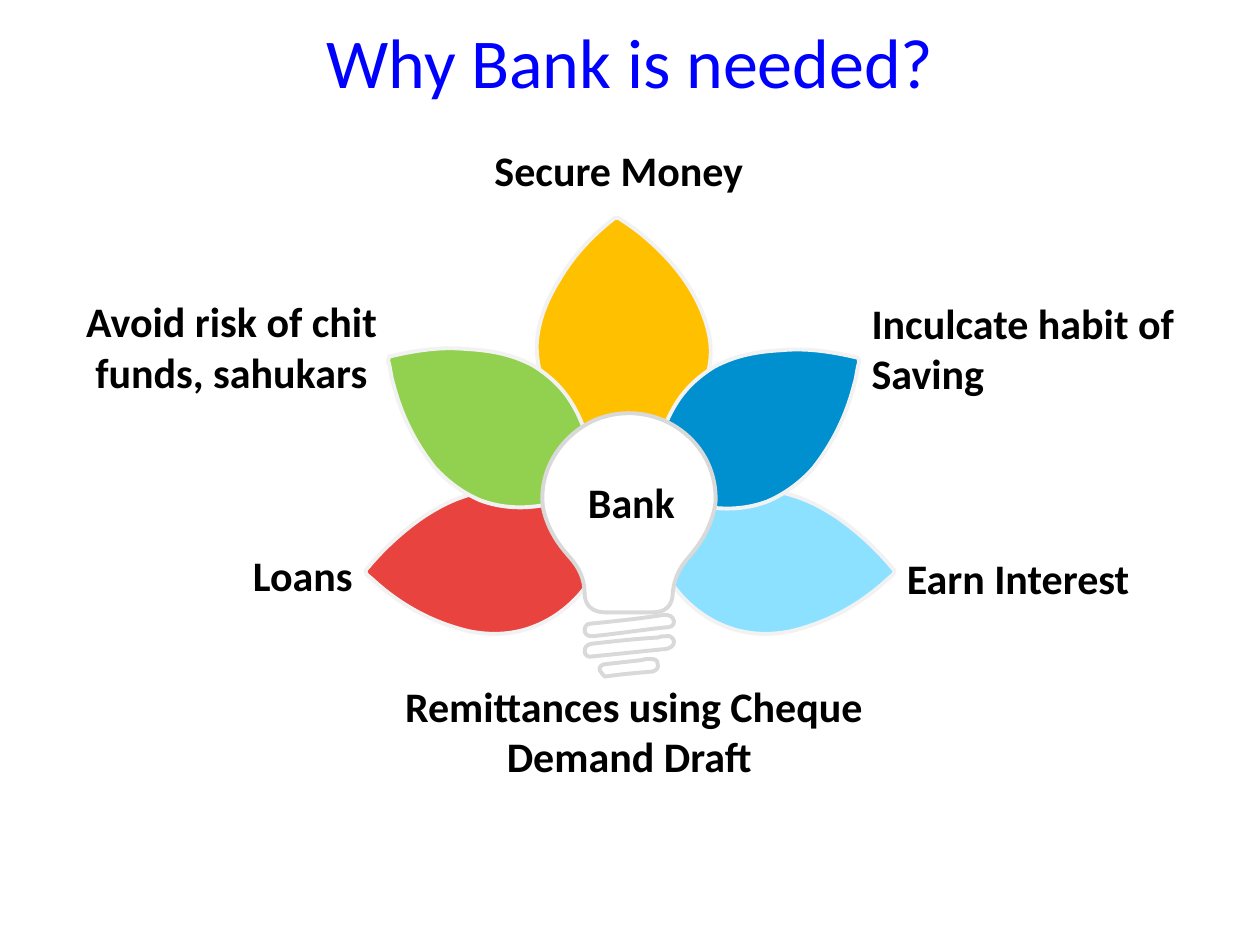
from lxml.etree import SubElement
from pptx import Presentation
from pptx.dml.color import RGBColor
from pptx.enum.text import MSO_ANCHOR, MSO_AUTO_SIZE, PP_ALIGN
from pptx.oxml.ns import qn
from pptx.util import Cm, Pt

COLOURS = {
    "title": "0000FF", "text": "000000", "petal edge": "F2F2F2",
    "bulb": "FFFFFF", "bulb edge": "D9D9D9", "gold": "FFC000",
    "sky": "8BE1FF", "blue": "0090D0", "red": "E9433F", "green": "92D050",
}

# Outlines are drawn on a grid of 100 units to 2.54 cm.
# Each holds a start point, then three points for every Bezier curve.
GRID = Cm(2.54) / 100

LOWER_PETAL = [
    (628, 501), (653, 495), (675, 484), (695, 468), (700, 464), (704, 460), (709, 456),
    (709, 455), (709, 454), (710, 453), (697, 437), (682, 423), (665, 411),
    (650, 401), (634, 393), (615, 390), (600, 388), (585, 390), (571, 395),
    (552, 403), (538, 415), (525, 430), (524, 433), (522, 435), (521, 437),
    (520, 441), (520, 441), (520, 441), (521, 442), (521, 443), (521, 444),
    (527, 454), (533, 464), (541, 473), (553, 486), (567, 495), (584, 500),
    (599, 504), (613, 504), (628, 501)]
TOP_PETAL = [
    (557, 247), (547, 223), (530, 203), (508, 185), (503, 181), (497, 177), (491, 173),
    (490, 173), (489, 173), (488, 173), (470, 187), (455, 203), (444, 222),
    (434, 238), (427, 255), (426, 274), (426, 290), (430, 304), (439, 318),
    (451, 335), (468, 348), (489, 358), (491, 360), (494, 361), (497, 362),
    (502, 362), (502, 362), (502, 362), (503, 361), (504, 361), (505, 361),
    (517, 354), (528, 346), (537, 337), (551, 324), (560, 309), (563, 291),
    (566, 276), (563, 262), (557, 247)]
UPPER_PETAL = [
    (645, 372), (661, 352), (672, 329), (678, 305), (680, 299), (680, 293), (682, 287),
    (681, 286), (681, 285), (681, 284), (660, 279), (640, 276), (620, 278),
    (601, 279), (584, 282), (567, 291), (554, 299), (543, 309), (535, 323),
    (525, 340), (521, 358), (520, 378), (520, 381), (520, 383), (521, 386),
    (523, 390), (523, 390), (523, 390), (524, 390), (524, 391), (525, 391),
    (536, 396), (547, 400), (559, 402), (576, 405), (593, 404), (609, 398),
    (623, 392), (635, 383), (645, 372)]
BULB_PARTS = [
    # Middle thread
    [(528, 505), (532, 504), (534, 506), (535, 509), (535, 513), (532, 514), (529, 515),
     (509, 517), (490, 519), (470, 521), (467, 522), (464, 520), (464, 517),
     (464, 513), (466, 512), (469, 511), (487, 509), (504, 507), (522, 506),
     (524, 505), (526, 505), (528, 505)],
    # Upper thread
    [(470, 505), (467, 505), (464, 504), (464, 500), (464, 497), (466, 495), (469, 495),
     (489, 493), (508, 491), (527, 488), (531, 488), (534, 489), (535, 493),
     (535, 497), (532, 498), (528, 498), (509, 500), (490, 503), (470, 505)],
    # Tip
    [(480, 537), (479, 536), (477, 534), (476, 532), (475, 529), (478, 527), (482, 527),
     (491, 526), (500, 525), (509, 524), (512, 523), (514, 523), (516, 523),
     (520, 523), (522, 524), (522, 527), (523, 530), (521, 532), (518, 533),
     (506, 534), (494, 535), (480, 537)],
    # Glass
    [(473, 333), (445, 345), (427, 374), (431, 403), (434, 418), (442, 431), (452, 442),
     (460, 451), (464, 460), (464, 471), (464, 481), (471, 486), (480, 486),
     (486, 486), (493, 486), (499, 486), (505, 486), (511, 486), (518, 486),
     (528, 486), (534, 481), (534, 470), (535, 460), (539, 451), (546, 443),
     (552, 436), (558, 428), (562, 419), (565, 412), (568, 403), (568, 396),
     (568, 347), (518, 315), (473, 333)],
]


def mirrored(outline, axis, rise=0):
    return [(2 * axis - x, y - rise) for x, y in outline]


class SlideBuilder:
    font = "Calibri"
    edge_width = Pt(2.25)

    def __init__(self, page):
        self.page = page

    def colour(self, name):
        return RGBColor.from_string(COLOURS[name])

    def outline(self, outline, fill, edge):
        start, *rest = [(x * GRID, y * GRID) for x, y in outline]
        builder = self.page.shapes.build_freeform(*start)
        builder.add_line_segments(rest, close=True)
        shape = builder.convert_to_shape()
        self.bend(shape)
        shape.shadow.inherit = False
        shape.fill.solid()
        shape.fill.fore_color.rgb = self.colour(fill)
        shape.line.color.rgb = self.colour(edge)
        shape.line.width = self.edge_width

    def bend(self, shape):
        """Join every three straight segments into one Bezier curve."""
        segments = list(shape._element.iter(qn("a:lnTo")))
        for i in range(0, len(segments), 3):
            parent = segments[i].getparent()
            curve = SubElement(parent, qn("a:cubicBezTo"))
            parent.replace(segments[i], curve)
            for segment in segments[i:i + 3]:
                curve.append(segment[0])
            for segment in segments[i + 1:i + 3]:
                parent.remove(segment)

    def text(self, lines, place, align=PP_ALIGN.CENTER, size=24, bold=True,
             colour="text", frame_format=None, spacing=None):
        box = self.page.shapes.add_textbox(*(Cm(length) for length in place))
        frame = box.text_frame
        settings = {"word_wrap": True, "auto_size": MSO_AUTO_SIZE.SHAPE_TO_FIT_TEXT}
        for name, value in (settings | (frame_format or {})).items():
            setattr(frame, name, value)
        for i, line in enumerate(lines):
            para = frame.add_paragraph() if i else frame.paragraphs[0]
            para.alignment = align
            para.line_spacing = spacing
            span = para.add_run()
            span.text = line
            for name, value in {"name": self.font, "size": Pt(size), "bold": bold}.items():
                setattr(span.font, name, value)
            span.font.color.rgb = self.colour(colour)


def main():
    deck = Presentation()
    deck.slide_width, deck.slide_height = Cm(25.4), Cm(19.05)
    slide = SlideBuilder(deck.slides.add_slide(deck.slide_layouts[6]))

    # Petals, from back to front
    for outline, fill in (
        (LOWER_PETAL, "sky"),
        (TOP_PETAL, "gold"),
        (UPPER_PETAL, "blue"),
        (mirrored(LOWER_PETAL, 500), "red"),
        (mirrored(UPPER_PETAL, 495, rise=1), "green"),
    ):
        slide.outline(outline, fill, "petal edge")

    # Petal labels
    for label, place, align in (
        ("Inculcate habit of Saving", (17.32, 5.87, 7.26, 2.31), PP_ALIGN.LEFT),
        ("Avoid risk of chit funds, sahukars ", (1.4, 5.84, 6.45, 2.31), PP_ALIGN.RIGHT),
        ("Secure Money", (9.68, 2.79, 5.59, 1.27), PP_ALIGN.CENTER),
        ("Earn Interest", (18.03, 11.02, 5.18, 1.27), PP_ALIGN.LEFT),
        ("Loans", (2.18, 10.95, 5.18, 1.27), PP_ALIGN.RIGHT),
    ):
        slide.text([label], place, align)

    # Title and the label below the bulb
    slide.text(["Why Bank is needed?"], (1.27, -0.36, 22.86, 3.18), size=40, bold=False,
               colour="title", frame_format={"auto_size": MSO_AUTO_SIZE.NONE,
                                             "vertical_anchor": MSO_ANCHOR.MIDDLE})
    slide.text(["Remittances using Cheque", "Demand Draft "], (7.85, 13.59, 9.86, 2.31),
               frame_format={"word_wrap": False})

    # Light bulb
    for part in BULB_PARTS:
        slide.outline(part, "bulb", "bulb edge")
    slide.text(["Bank"], (10.85, 9.65, 3.76, 1.14), spacing=Pt(24))

    deck.save("out.pptx")


if __name__ == "__main__":
    main()
